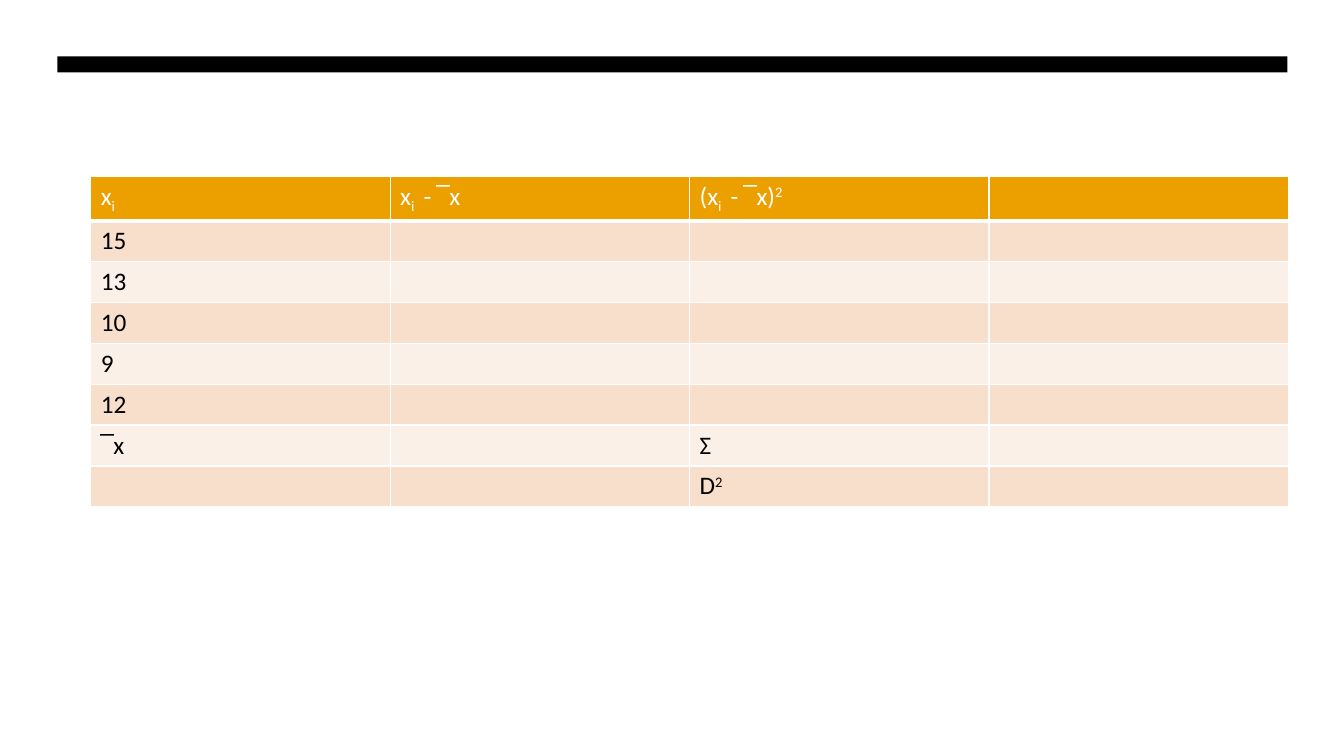
import pptx
import pptx.dml.color
import pptx.enum.shapes
import pptx.oxml.ns
import pptx.util
import lxml.etree

Inches = pptx.util.Inches


def color(value):
    return pptx.dml.color.RGBColor.from_string(value)


def add_border(cell, side, points):
    qn = pptx.oxml.ns.qn
    properties = cell._tc.get_or_add_tcPr()
    line = lxml.etree.SubElement(properties, qn(f"a:{side}"), w=str(pptx.util.Pt(points)))
    fill = lxml.etree.SubElement(line, qn("a:solidFill"))
    lxml.etree.SubElement(fill, qn("a:srgbClr"), val="FFFFFF")


deck = pptx.Presentation()
deck.slide_width = Inches(13.33)
deck.slide_height = Inches(7.5)
page = deck.slides.add_slide(deck.slide_layouts[6])

bar = page.shapes.add_shape(
    pptx.enum.shapes.MSO_SHAPE.RECTANGLE,
    Inches(0.57), Inches(0.56), Inches(12.2), Inches(0.16),
)
bar.shadow.inherit = False
bar.fill.solid()
bar.fill.fore_color.rgb = color("000000")
bar.line.fill.background()

subscript, superscript = -25000, 30000
texts = {
    (0, 0): [("х", 0), ("i", subscript)],
    (0, 1): [("х", 0), ("i ", subscript), (" - ‾x", 0)],
    (0, 2): [("(х", 0), ("i ", subscript), (" - ‾x)", 0), ("2", superscript)],
    (6, 0): [("‾x", 0)],
    (6, 2): [("Σ", 0)],
    (7, 2): [("D", 0), ("2", superscript)],
}
for row, value in enumerate(["15", "13", "10", "9", "12"], start=1):
    texts[row, 0] = [(value, 0)]

row_count, column_count = 8, 4
table = page.shapes.add_table(
    row_count, column_count,
    Inches(0.9), Inches(1.75), Inches(11.88), Inches(3.24),
).table

for row in range(row_count):
    for column in range(column_count):
        cell = table.cell(row, column)
        for side in ("lnL", "lnR", "lnT", "lnB"):
            add_border(cell, side, 3 if row == 0 and side == "lnB" else 1)
        cell.fill.solid()
        band = "F7DFCC" if row % 2 else "FBF0E7"
        cell.fill.fore_color.rgb = color("EBA000" if row == 0 else band)

        para = cell.text_frame.paragraphs[0]
        for text, baseline in texts.get((row, column), []):
            span = para.add_run()
            span.text = text
            span.font.name = "Calibri"
            span.font.size = pptx.util.Pt(18)
            span.font.bold = False
            span.font.color.rgb = color("000000" if row else "FFFFFF")
            if baseline:
                span.font._element.set("baseline", str(baseline))

deck.save("out.pptx")
